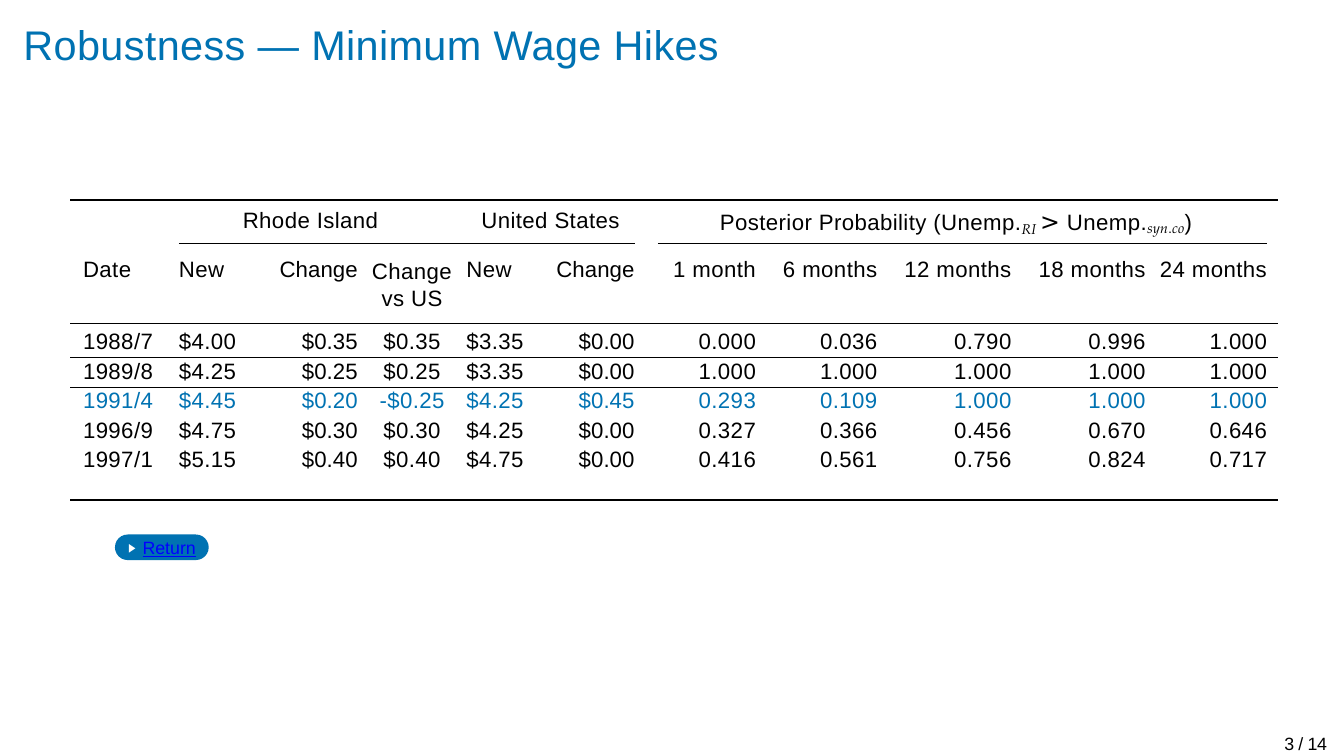
from lxml.etree import SubElement
from pptx import Presentation
from pptx.dml.color import RGBColor
from pptx.enum.shapes import MSO_CONNECTOR, MSO_SHAPE
from pptx.enum.text import MSO_AUTO_SIZE, PP_ALIGN
from pptx.oxml.ns import qn
from pptx.util import Inches, Pt

BLUE = RGBColor(0x00, 0x72, 0xB2)
BLACK = RGBColor(0, 0, 0)
WHITE = RGBColor(0xFF, 0xFF, 0xFF)
LINK = RGBColor(0, 0, 0xFF)
LEFT, CENTER, RIGHT = PP_ALIGN.LEFT, PP_ALIGN.CENTER, PP_ALIGN.RIGHT
NO_GRID = "{2D5ABB26-0587-4C30-8999-92F81FD0307C}"

# Table content; empty columns separate the groups
HEADER = ["Date", "New", "Change", "Change vs US", "New", "Change", "",
          "1 month", "6 months", "12 months", "18 months", "24 months", ""]
HIKES = [
    ["1988/7", "$4.00", "$0.35", "$0.35", "$3.35", "$0.00", "",
     "0.000", "0.036", "0.790", "0.996", "1.000", ""],
    ["1989/8", "$4.25", "$0.25", "$0.25", "$3.35", "$0.00", "",
     "1.000", "1.000", "1.000", "1.000", "1.000", ""],
    ["1991/4", "$4.45", "$0.20", "-$0.25", "$4.25", "$0.45", "",
     "0.293", "0.109", "1.000", "1.000", "1.000", ""],
    ["1996/9", "$4.75", "$0.30", "$0.30", "$4.25", "$0.00", "",
     "0.327", "0.366", "0.456", "0.670", "0.646", ""],
    ["1997/1", "$5.15", "$0.40", "$0.40", "$4.75", "$0.00", "",
     "0.416", "0.561", "0.756", "0.824", "0.717", ""],
]
COLUMN_WIDTHS = [0.51, 0.34, 0.5, 0.51, 0.34, 0.45, 0.11,
                 0.46, 0.57, 0.63, 0.63, 0.57, 0.05]
ROW_HEIGHTS = [0.38, 0.16, 0.14, 0.14, 0.14, 0.25]
ALIGNMENTS = [LEFT, LEFT, RIGHT, CENTER, LEFT] + [RIGHT] * 8
GAPS = (6, 12)
HIGHLIGHT = "1991/4"


class TalkSlide:
    def __init__(self, deck):
        self.slide = deck.slides.add_slide(deck.slide_layouts[5])
        self.shapes = self.slide.shapes

    def style(self, run, size, color=BLACK, font="Arial", spacing=0.1,
              italic=False, baseline=0):
        run.font.name, run.font.size = font, Pt(size)
        run.font.color.rgb, run.font.italic = color, italic
        properties = run.font._element
        properties.set("spc", str(round(spacing * 100)))
        if baseline:
            properties.set("baseline", str(baseline * 1000))

    def frame(self, shape, top=0.02):
        frame = shape.text_frame
        frame.word_wrap, frame.auto_size = True, MSO_AUTO_SIZE.NONE
        frame.margin_left = frame.margin_right = frame.margin_bottom = 0
        frame.margin_top = Inches(top)
        shape.text_frame.vertical_anchor = 1
        return frame.paragraphs[0]

    def title(self, text, left, top, width, height):
        heading = self.shapes.title
        heading.left, heading.top = Inches(left), Inches(top)
        heading.width, heading.height = Inches(width), Inches(height)
        line = self.frame(heading)
        line.text, line.alignment, line.space_before = text, LEFT, Pt(1.4)
        line._p.get_or_add_pPr().set("marL", str(Inches(0.01)))
        self.style(line.runs[0], 14, BLUE)

    def label(self, parts, left, top, width, height, indent=0.01,
              before=1.4, underline=False):
        box = self.shapes.add_textbox(Inches(left), Inches(top),
                                      Inches(width), Inches(height))
        line = self.frame(box)
        line.space_before = Pt(before)
        line._p.get_or_add_pPr().set("marL", str(Inches(indent)))
        for text, look in parts:
            run = line.add_run()
            run.text = text
            self.style(run, **look)
            run.font.underline = underline

    def rule(self, left, right, top, weight):
        rule = self.shapes.add_connector(
            MSO_CONNECTOR.STRAIGHT, Inches(left), Inches(top),
            Inches(right), Inches(top))
        rule.line.color.rgb, rule.line.width = BLACK, Pt(weight)
        SubElement(rule._element.spPr, qn("a:effectLst"))

    def shape(self, kind, left, top, width, height, color, rotation=0):
        shape = self.shapes.add_shape(kind, Inches(left), Inches(top),
                                      Inches(width), Inches(height))
        shape.shadow.inherit = False
        shape.fill.solid()
        shape.fill.fore_color.rgb = color
        shape.line.fill.background()
        shape.rotation = rotation
        return shape

    def border(self, cell, side, weight):
        line = SubElement(cell._tc.get_or_add_tcPr(), qn(f"a:ln{side}"),
                          w=str(Pt(weight)))
        fill = SubElement(line, qn("a:solidFill"))
        SubElement(fill, qn("a:srgbClr"), val=str(BLACK))

    def cell(self, cell, text, row, column):
        # Rules above and below the row
        last = len(HIKES)
        over = {0: 0 if column in (0, *GAPS) else 0.25, 1: 0.5, 2: 0.5}
        under = {0: 0.5, 1: 0.5, last: 0.75}
        for side, weights in (("T", over), ("B", under)):
            if weights.get(row):
                self.border(cell, side, weights[row])
        cell.fill.background()

        # Text of the cell
        cell.margin_left = Inches(0.06 if column == 0 else 0)
        cell.margin_right = cell.margin_bottom = 0
        cell.margin_top = Inches({0: 0.07, 1: 0.02}.get(row, 0))
        line = cell.text_frame.paragraphs[0]
        line.alignment = ALIGNMENTS[column]
        line.space_before = Pt({0: 5.3, 1: 1.8}.get(row, 0))
        if row == 0:
            line.line_spacing = 1.08 if ALIGNMENTS[column] == CENTER else 1.0
        elif row < last:
            line.line_spacing = Pt(8.8)
        if not text:
            SubElement(line._p, qn("a:endParaRPr"), sz="750")
            return
        line.text = text
        color = BLUE if row and HIKES[row - 1][0] == HIGHLIGHT else BLACK
        spacing = 0 if ALIGNMENTS[column] == RIGHT and column < 6 else 0.1
        self.style(line.runs[0], 7.5, color, spacing=spacing)

    def table(self, rows, left, top):
        table = self.shapes.add_table(
            len(rows), len(COLUMN_WIDTHS), Inches(left), Inches(top),
            Inches(sum(COLUMN_WIDTHS)), Inches(sum(ROW_HEIGHTS))).table
        table.first_row = table.horz_banding = False
        table._tbl.tblPr.find(qn("a:tableStyleId")).text = NO_GRID
        for column, width in zip(table.columns, COLUMN_WIDTHS):
            column.width = Inches(width)
        for row, height in zip(table.rows, ROW_HEIGHTS):
            row.height = Inches(height)
        for r, row in enumerate(rows):
            for c, text in enumerate(row):
                self.cell(table.cell(r, c), text, r, c)


def main():
    deck = Presentation()
    deck.slide_width, deck.slide_height = Inches(6.31), Inches(3.55)
    talk = TalkSlide(deck)
    talk.title("Robustness — Minimum Wage Hikes", 0.1, 0.07, 4, 0.27)

    # Group headings over the table
    plain = dict(size=7.5)
    index = dict(size=8.2, font="TeX Gyre Pagella")
    talk.rule(0.33, 6, 0.94, 0.63)
    talk.label([("Rhode Island", plain)], 1.13, 0.95, 0.72, 0.16)
    talk.label([("United States", plain)], 2.25, 0.95, 0.72, 0.16)
    talk.label([
        ("Posterior Probability (Unemp.", plain),
        ("RI ", dict(index, italic=True, baseline=-15)),
        ("> ", dict(size=8, font="DejaVu Sans", spacing=-0.2)),
        ("Unemp.", plain),
        ("syn", dict(index, italic=True, baseline=-10)),
        (".", dict(index, baseline=-10)),
        ("co", dict(index, italic=True, baseline=-10)),
        (")", plain),
    ], 3.34, 0.95, 2.4, 0.16, indent=0.04, before=1.1)

    talk.table([HEADER] + HIKES, 0.33, 1.14)

    # Return button
    button = talk.shape(MSO_SHAPE.ROUNDED_RECTANGLE,
                        0.54, 2.51, 0.44, 0.12, BLUE)
    button.adjustments[0] = 0.5
    talk.shape(MSO_SHAPE.ISOSCELES_TRIANGLE,
               0.6, 2.56, 0.04, 0.03, WHITE, rotation=90)
    small = dict(size=6, spacing=-0.1)
    talk.label([("Return", dict(small, color=LINK, spacing=0))],
               0.66, 2.5, 0.3, 0.13, before=0.9, underline=True)

    # Page count
    talk.label([("3 / 14", small)], 5.99, 3.42, 0.3, 0.13,
               indent=0.04, before=0.7)
    deck.save("out.pptx")


if __name__ == "__main__":
    main()
